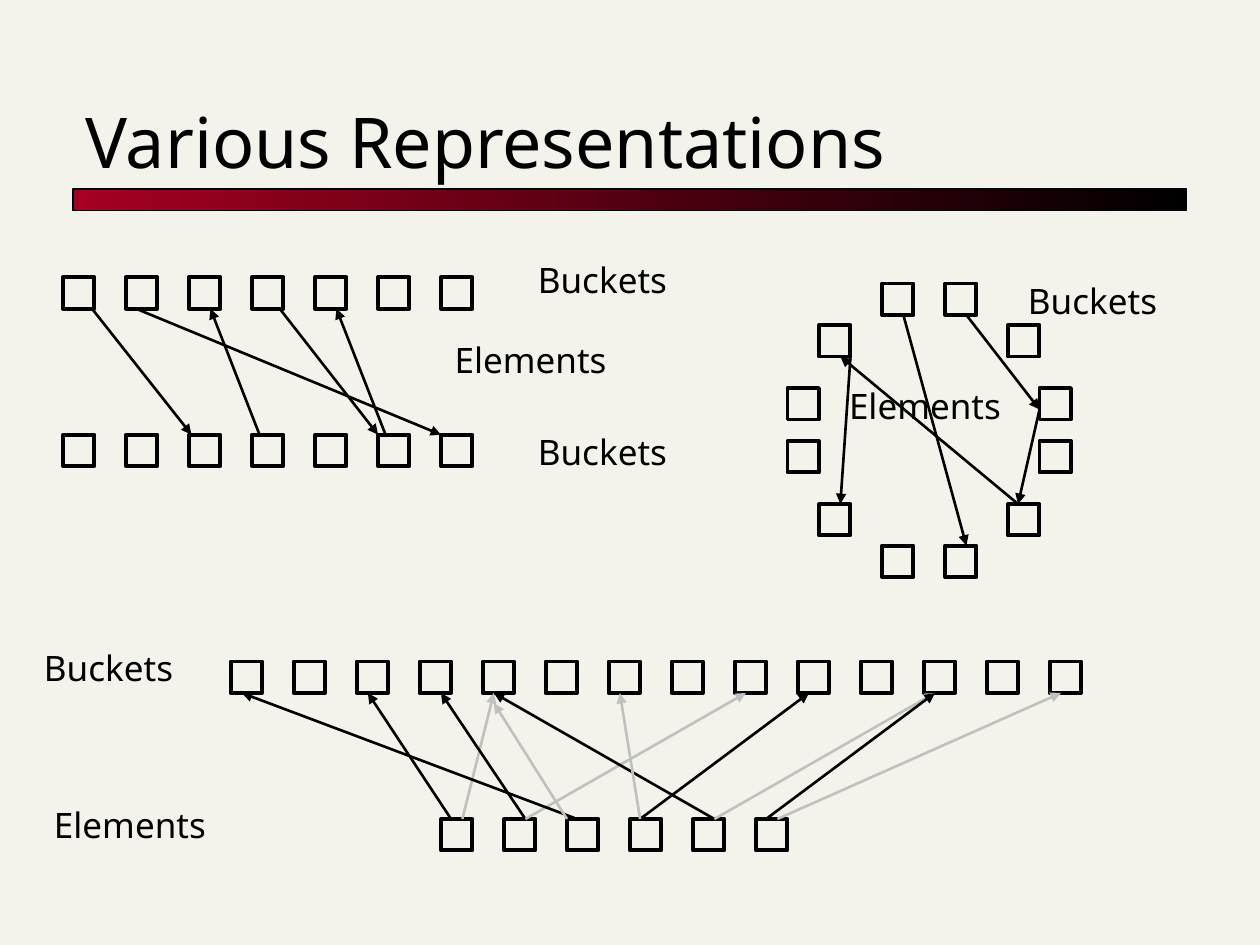
"""Build the slide comparing three drawings of buckets and elements."""
import pptx
import pptx.dml.color
import pptx.enum.shapes
import pptx.enum.text
import pptx.oxml.ns
import pptx.util
from lxml import etree

Inches = pptx.util.Inches
Pt = pptx.util.Pt
COLORS = {"paper": "F4F3EB", "ink": "000000", "red": "A50021", "gray": "C0C0C0"}
BOX = 0.25
STEP = 0.5
FONT = "Noto Sans"
ANCHOR = pptx.enum.text.MSO_ANCHOR
TITLE_FRAME = {"word_wrap": True, "vertical_anchor": ANCHOR.BOTTOM}
LABEL_FRAME = {"word_wrap": False, "vertical_anchor": ANCHOR.TOP}

ROW_ARROWS = [
    ((2.06, 3.45), (1.67, 2.45)), ((0.73, 2.45), (1.52, 3.45)),
    ((3.06, 3.45), (2.67, 2.45)), ((2.22, 2.45), (3, 3.45)),
    ((1.08, 2.45), (3.5, 3.45)),
]
RING_BOXES = [
    (7, 2.25), (7.5, 2.25), (8, 2.58), (8.25, 3.08), (8.25, 3.5),
    (8, 4), (7.5, 4.33), (7, 4.33), (6.5, 4), (6.25, 3.5),
    (6.25, 3.08), (6.5, 2.58),
]
RING_ARROWS = [
    ((7.17, 2.5), (7.67, 4.33)), ((7.67, 2.5), (8.25, 3.25)),
    ((6.75, 2.83), (6.67, 4)), ((8.25, 3.25), (8.08, 4)),
    ((8.08, 4), (6.67, 2.83)),
]
CHOICES = [
    (3.58, 2.92, "ink"), (3.67, 3.92, "gray"), (4.17, 3.5, "ink"),
    (4.17, 5.92, "gray"), (5.67, 3.92, "ink"), (5.67, 7.42, "gray"),
    (4.58, 1.92, "ink"), (4.5, 3.92, "gray"), (5.08, 6.42, "ink"),
    (6.08, 7.42, "ink"), (5.08, 4.92, "gray"), (6.17, 8.42, "gray"),
]


def rgb(name):
    """Return a palette colour."""
    return pptx.dml.color.RGBColor.from_string(COLORS[name])


def set_format(target, values):
    """Set each named attribute on the target."""
    for name, value in values.items():
        setattr(target, name, value)


def set_line(line, color, width):
    """Give a line its colour and width."""
    line.color.rgb = rgb(color)
    line.width = Pt(width)


def add_rectangle(shapes, left, top, width, height, line_width):
    """Add an outlined rectangle without shadow."""
    rectangle = shapes.add_shape(
        pptx.enum.shapes.MSO_SHAPE.RECTANGLE,
        Inches(left), Inches(top), Inches(width), Inches(height))
    rectangle.shadow.inherit = False
    set_line(rectangle.line, "ink", line_width)
    return rectangle


def add_boxes(shapes, corners):
    """Add an empty square at each corner."""
    for left, top in corners:
        add_rectangle(shapes, left, top, BOX, BOX, 2.25).fill.background()


def row(left, top, count):
    """Return the corners of an evenly spaced row of squares."""
    return [(left + STEP * index, top) for index in range(count)]


def add_arrow(shapes, start, end, color="ink"):
    """Add a straight arrow that points at its end."""
    arrow = shapes.add_connector(
        pptx.enum.shapes.MSO_CONNECTOR.STRAIGHT,
        *(Inches(value) for value in (*start, *end)))
    set_line(arrow.line, color, 1.5)
    qn = pptx.oxml.ns.qn
    properties = arrow._element.spPr
    etree.SubElement(properties.find(qn("a:ln")), qn("a:tailEnd"), type="triangle")
    etree.SubElement(properties, qn("a:effectLst"))


def add_text(shapes, text, area, size, frame_format):
    """Add one line of text in the given area."""
    frame = shapes.add_textbox(*(Inches(value) for value in area)).text_frame
    set_format(frame, frame_format)
    run = frame.paragraphs[0].add_run()
    run.text = text
    set_format(run.font, {"name": FONT, "size": Pt(size)})
    run.font.color.rgb = rgb("ink")


def add_label(shapes, text, left, top):
    """Add a diagram label."""
    width = {"Buckets": 1.28, "Elements": 1.44}[text]
    add_text(shapes, text, (left, top, width, 0.5), 20, LABEL_FRAME)


def add_heading(shapes):
    """Add the title and the gradient bar below it."""
    bar = add_rectangle(shapes, 0.58, 1.5, 8.84, 0.17, 0.75)
    bar.fill.gradient()
    bar.fill.gradient_angle = 0
    for stop, color, position in zip(bar.fill.gradient_stops, ("red", "ink"), (0, 1)):
        stop.color.rgb = rgb(color)
        stop.position = position
    add_text(shapes, "Various Representations", (0.58, 0.42, 8.83, 1.08), 40, TITLE_FRAME)


def add_two_rows(shapes):
    """Add two facing rows of buckets joined by elements."""
    add_boxes(shapes, row(0.5, 2.2, 7) + row(0.5, 3.45, 7))
    for start, end in ROW_ARROWS:
        add_arrow(shapes, start, end)
    add_label(shapes, "Buckets", 4.17, 2)
    add_label(shapes, "Buckets", 4.17, 3.37)
    add_label(shapes, "Elements", 3.51, 2.64)


def add_ring(shapes):
    """Add a ring of buckets joined by elements."""
    add_boxes(shapes, RING_BOXES)
    for start, end in RING_ARROWS:
        add_arrow(shapes, start, end)
    add_label(shapes, "Buckets", 8.06, 2.17)
    add_label(shapes, "Elements", 6.64, 3)


def add_choices(shapes):
    """Add elements pointing at their used and unused buckets."""
    add_boxes(shapes, row(1.83, 5.25, 14) + row(3.5, 6.5, 6))
    add_label(shapes, "Buckets", 0.25, 5.08)
    add_label(shapes, "Elements", 0.33, 6.33)
    for element, bucket, color in CHOICES:
        bottom = 5.58 if element == 4.5 else 5.5
        add_arrow(shapes, (element, 6.5), (bucket, bottom), color)


def main():
    """Build and save the slide."""
    deck = pptx.Presentation()
    set_format(deck, {"slide_width": Inches(10), "slide_height": Inches(7.5)})
    slide = deck.slides.add_slide(deck.slide_layouts[6])
    slide.background.fill.solid()
    slide.background.fill.fore_color.rgb = rgb("paper")
    add_heading(slide.shapes)
    add_two_rows(slide.shapes)
    for add_diagram in (add_ring, add_choices):
        add_diagram(slide.shapes.add_group_shape().shapes)
    deck.save("out.pptx")


if __name__ == "__main__":
    main()
